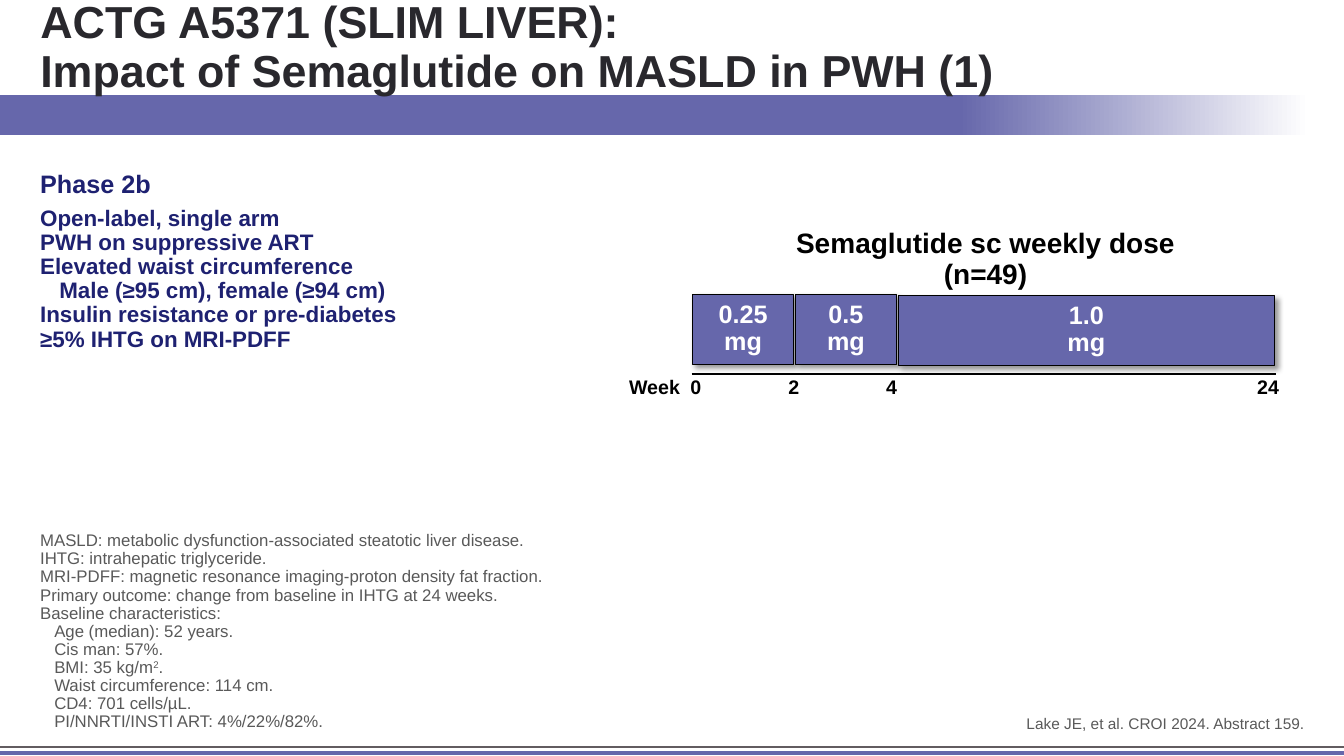
from dataclasses import dataclass

from lxml import etree
from pptx import Presentation
from pptx.dml.color import RGBColor
from pptx.enum.shapes import MSO_CONNECTOR, MSO_SHAPE
from pptx.enum.text import MSO_ANCHOR, MSO_AUTO_SIZE, PP_ALIGN
from pptx.oxml.ns import qn
from pptx.util import Inches, Pt

LEFT, CENTER, RIGHT = PP_ALIGN.LEFT, PP_ALIGN.CENTER, PP_ALIGN.RIGHT
RECTANGLE = MSO_SHAPE.RECTANGLE
STRAIGHT = MSO_CONNECTOR.STRAIGHT
TOP, BOTTOM = MSO_ANCHOR.TOP, MSO_ANCHOR.BOTTOM
NO_FIT, GROW = MSO_AUTO_SIZE.NONE, MSO_AUTO_SIZE.SHAPE_TO_FIT_TEXT

FONT = "Arial"
COLORS = {
    "title": "29282D", "violet": "6667AB", "navy": "1E2171", "footer": "625C60",
    "grey": "595959", "black": "000000", "white": "FFFFFF",
}


@dataclass(frozen=True)
class Style:
    size: float
    color: str
    bold: bool = True
    align: PP_ALIGN = LEFT


@dataclass(frozen=True)
class Line:
    text: str
    indent: float = 0
    before: float = 0
    size: float = 0
    superscript: str = ""
    ending: str = ""


@dataclass(frozen=True)
class Dose:
    left: float
    top: float
    width: float
    lines: tuple[str, ...]


@dataclass(frozen=True)
class Rule:
    left: float
    right: float
    y: float
    color: str
    weight: float


TITLE_STYLE = Style(32, "title")
DESIGN_STYLE = Style(16, "navy")
HEADING_STYLE = Style(20, "black", align=CENTER)
DOSE_STYLE = Style(18, "white", align=CENTER)
WEEK_STYLE = Style(14, "black")
NOTE_STYLE = Style(12, "grey", bold=False)
CITATION_STYLE = Style(11, "grey", bold=False, align=RIGHT)

TITLE_LINES = ("ACTG A5371 (SLIM LIVER):", "Impact of Semaglutide on MASLD in PWH (1)")
DESIGN = [
    Line("Phase 2b", size=18),
    Line("Open-label, single arm", before=6),
    Line("PWH on suppressive ART"),
    Line("Elevated waist circumference"),
    Line("Male (≥95 cm), female (≥94 cm)", indent=0.19),
    Line("Insulin resistance or pre-diabetes"),
    Line("≥5% IHTG on MRI-PDFF"),
]
NOTE_INDENT = 0.14
NOTES = [
    Line("MASLD: metabolic dysfunction-associated steatotic liver disease."),
    Line("IHTG: intrahepatic triglyceride."),
    Line("MRI-PDFF: magnetic resonance imaging-proton density fat fraction."),
    Line("Primary outcome: change from baseline in IHTG at 24 weeks."),
    Line("Baseline characteristics:"),
    Line("Age (median): 52 years.", NOTE_INDENT),
    Line("Cis man: 57%.", NOTE_INDENT),
    Line("BMI: 35 kg/m", NOTE_INDENT, superscript="2", ending="."),
    Line("Waist circumference: 114 cm.", NOTE_INDENT),
    Line("CD4: 701 cells/µL.", NOTE_INDENT),
    Line("PI/NNRTI/INSTI ART: 4%/22%/82%.", NOTE_INDENT),
]
DOSES = [
    Dose(6.87, 2.92, 1, ("0.25 mg",)),
    Dose(7.89, 2.92, 1, ("0.5 mg",)),
    Dose(8.91, 2.93, 3.73, ("1.0", "mg")),
]
RULES = [
    Rule(-0.01, 13.34, 7.41, "footer", 1.75),
    Rule(-0.01, 13.34, 7.47, "violet", 3.25),
    Rule(6.86, 12.66, 3.71, "black", 2),
]
WEEK_TABS = {"0": 0.61, "2": 1.58, "4": 2.55, "24": 6.23}


def rgb(name: str) -> RGBColor:
    return RGBColor.from_string(COLORS[name])


def add_run(paragraph, text: str, style: Style, size: float = 0):
    run = paragraph.add_run()
    run.text = text
    run.font.name = FONT
    run.font.size = Pt(size or style.size)
    run.font.bold = style.bold
    run.font.color.rgb = rgb(style.color)
    return run


def write_lines(frame, lines: list[Line], style: Style) -> None:
    frame.word_wrap = True
    for index, line in enumerate(lines):
        paragraph = frame.add_paragraph() if index else frame.paragraphs[0]
        paragraph.alignment = style.align
        paragraph.line_spacing = 0.9
        if line.before:
            paragraph.space_before = Pt(line.before)
        if line.indent:
            paragraph._p.get_or_add_pPr().set("marL", str(Inches(line.indent)))
        add_run(paragraph, line.text, style, line.size)
        if line.superscript:
            raised = add_run(paragraph, line.superscript, style)
            raised._r.get_or_add_rPr().set("baseline", "30000")
            add_run(paragraph, line.ending, style)


def add_text(slide, left: float, top: float, width: float, height: float,
             lines: list[Line], style: Style):
    box = slide.shapes.add_textbox(Inches(left), Inches(top), Inches(width), Inches(height))
    write_lines(box.text_frame, lines, style)
    box.text_frame.auto_size = GROW
    return box


def add_rectangle(slide, left: float, top: float, width: float, height: float):
    shape = slide.shapes.add_shape(
        RECTANGLE, Inches(left), Inches(top), Inches(width), Inches(height))
    shape.shadow.inherit = False
    return shape


def add_rule(slide, rule: Rule) -> None:
    line = slide.shapes.add_connector(
        STRAIGHT, Inches(rule.left), Inches(rule.y), Inches(rule.right), Inches(rule.y))
    line.line.color.rgb = rgb(rule.color)
    line.line.width = Pt(rule.weight)
    etree.SubElement(line._element.spPr, qn("a:effectLst"))


def add_dose(slide, dose: Dose) -> None:
    bar = add_rectangle(slide, dose.left, dose.top, dose.width, 0.7)
    bar.fill.solid()
    bar.fill.fore_color.rgb = rgb("violet")
    bar.line.color.rgb = rgb("black")
    bar.line.width = Pt(0.75)
    effects = bar._element.spPr.find(qn("a:effectLst"))
    shadow = etree.SubElement(effects, qn("a:outerShdw"), blurRad=str(Pt(4)),
                              dist=str(Pt(3)), dir=str(45 * 60000), rotWithShape="0")
    shade = etree.SubElement(shadow, qn("a:srgbClr"), val=COLORS["black"])
    etree.SubElement(shade, qn("a:alpha"), val="40000")
    frame = bar.text_frame
    frame.vertical_anchor = TOP
    frame.margin_left = frame.margin_right = Inches(0.12)
    frame.margin_top = Inches(0.07)
    frame.margin_bottom = 0
    write_lines(frame, [Line(text) for text in dose.lines], DOSE_STYLE)


def add_title(slide):
    title = slide.shapes.title
    title.left, title.top = Inches(0.3), Inches(0)
    title.width, title.height = Inches(12.82), Inches(1.01)
    frame = title.text_frame
    frame.auto_size = NO_FIT
    frame.vertical_anchor = BOTTOM
    write_lines(frame, [Line(TITLE_LINES[0])], TITLE_STYLE)
    frame.paragraphs[0].add_line_break()
    add_run(frame.paragraphs[0], TITLE_LINES[1], TITLE_STYLE)
    return title


def add_title_band(slide, title) -> None:
    band = add_rectangle(slide, -0.01, 0.94, 13.4, 0.4)
    band.line.fill.background()
    band.fill.gradient()
    band.fill.gradient_angle = 180
    for stop, (position, color) in zip(band.fill.gradient_stops,
                                       ((0.03, "white"), (0.29, "violet"))):
        stop.position = position
        stop.color.rgb = rgb(color)
    title._element.addprevious(band._element)


def add_week_axis(slide) -> None:
    labels = "\t".join(["Week", *WEEK_TABS])
    axis = add_text(slide, 6.14, 3.7, 7.19, 0.31, [Line(labels)], WEEK_STYLE)
    properties = axis.text_frame.paragraphs[0]._p.get_or_add_pPr()
    tabs = etree.SubElement(properties, qn("a:tabLst"))
    for position in WEEK_TABS.values():
        etree.SubElement(tabs, qn("a:tab"), pos=str(Inches(position)), algn="l")


def main() -> None:
    deck = Presentation()
    deck.slide_width, deck.slide_height = Inches(13.33), Inches(7.5)
    slide = deck.slides.add_slide(deck.slide_layouts[5])

    # Title and frame
    add_title_band(slide, add_title(slide))
    for rule in RULES:
        add_rule(slide, rule)

    # Study design
    add_text(slide, 0.3, 1.65, 5.09, 1.91, DESIGN, DESIGN_STYLE)

    # Dosing timeline
    add_text(slide, 6.89, 2.23, 5.77, 0.71,
             [Line("Semaglutide sc weekly dose"), Line("(n=49)")], HEADING_STYLE)
    for dose in DOSES:
        add_dose(slide, dose)
    add_week_axis(slide)

    # Notes and citation
    add_text(slide, 0.3, 5.23, 5.53, 2.1, NOTES, NOTE_STYLE)
    add_text(slide, 6.67, 7.06, 6.37, 0.27,
             [Line("Lake JE, et al. CROI 2024. Abstract 159.")], CITATION_STYLE)
    deck.save("out.pptx")


if __name__ == "__main__":
    main()
